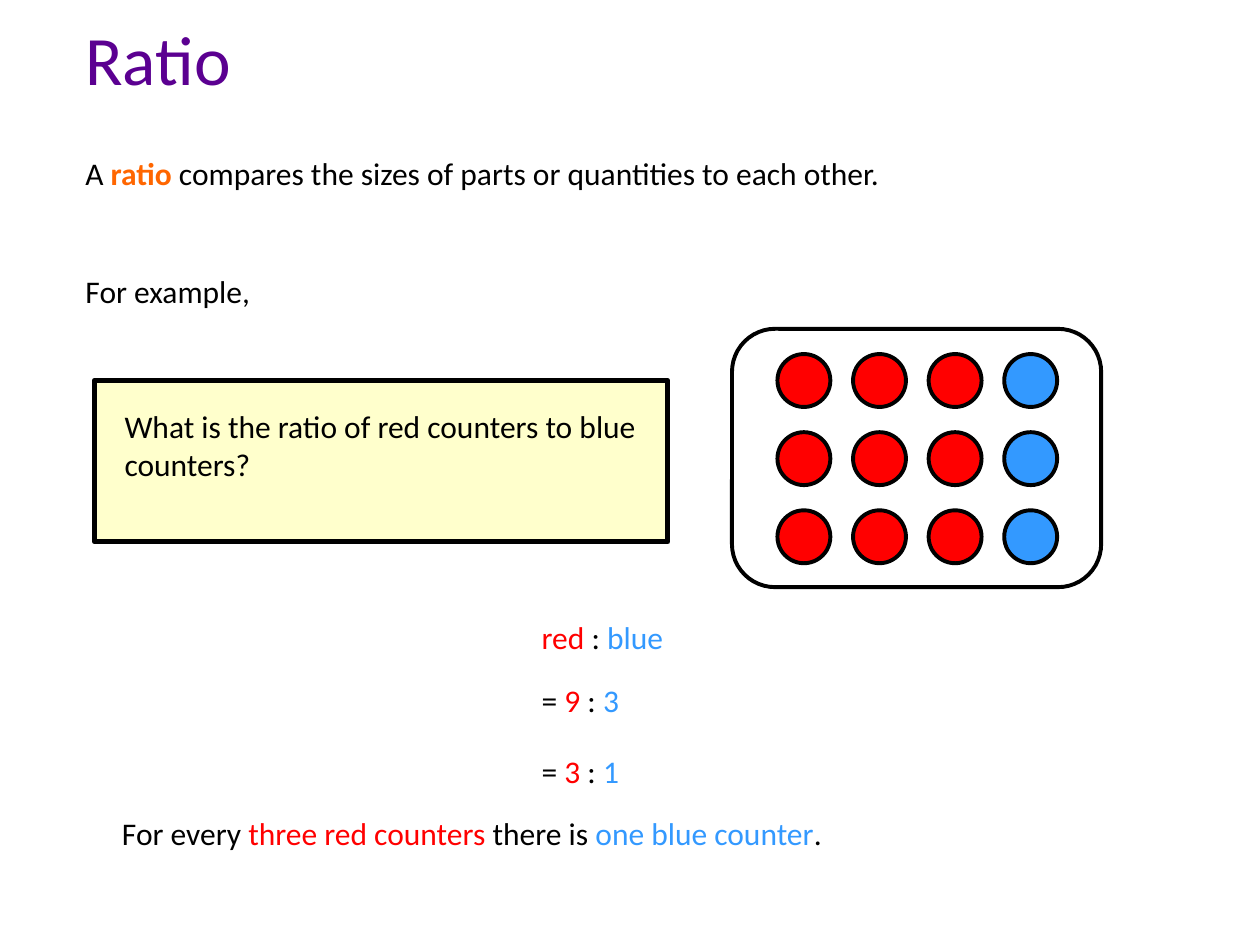
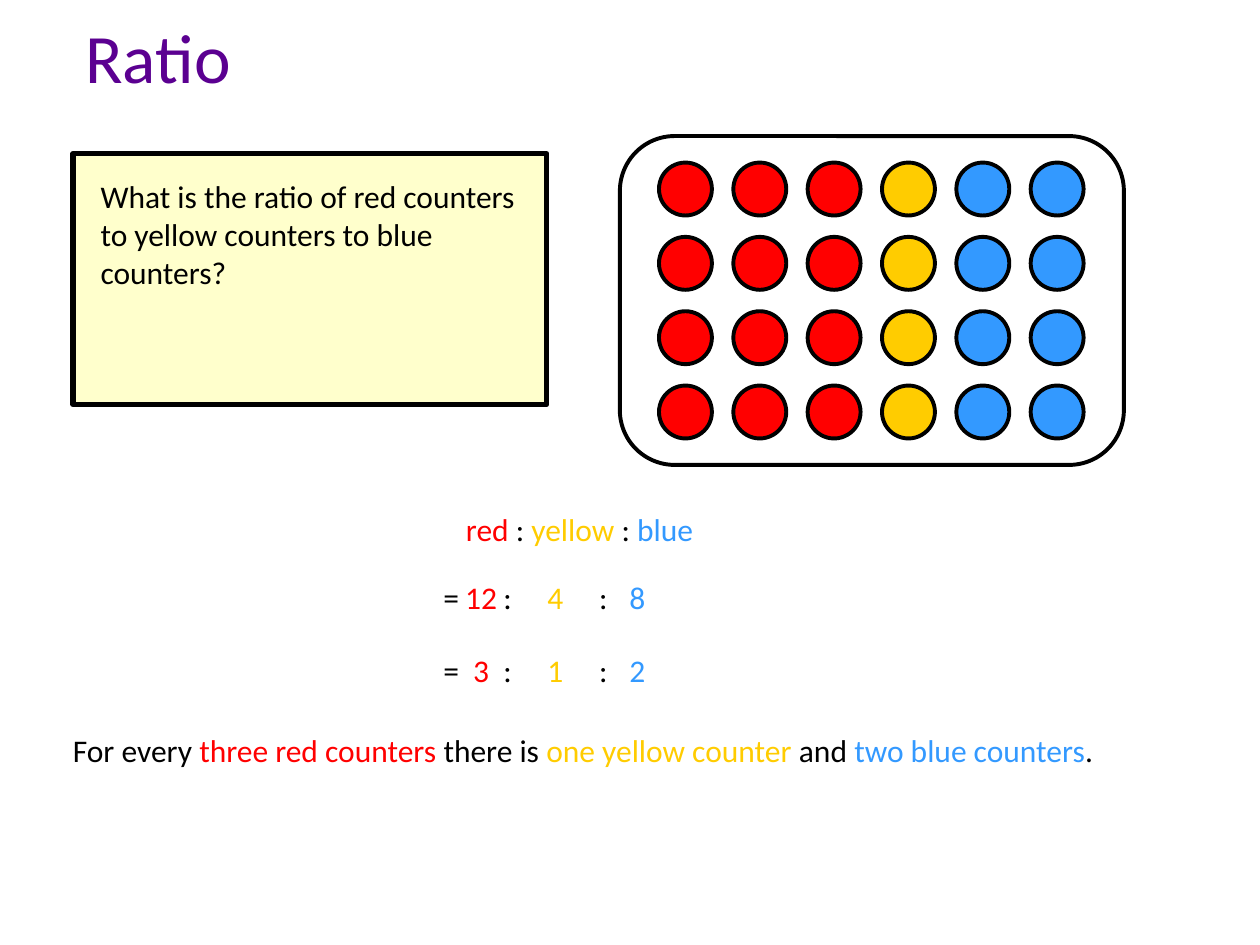
from lxml import etree
from pptx import Presentation
from pptx import util as u
from pptx.dml import color
from pptx.enum import shapes, text
from pptx.oxml import ns

COLOURS = {
    "title": "5B0091", "ink": "000000", "term": "FF6600",
    "red": "FF0000", "yellow": "FFCC00", "blue": "3399FF",
    "card": "FFFFCC", "panel": "FFFFFF",
}
KINDS = shapes.MSO_SHAPE
BODY = {"name": "Calibri", "size": u.Pt(18)}
TITLE = {"name": "Calibri", "size": u.Pt(39.6)}
COUNTER_SIZE = 0.42
# Centres of the columns in a three-part ratio, from the text edge
RATIO_TABS = [0.3, 0.51, 0.89, 1.27, 1.54]


def draw(parent, kind, place, fill, line_width=0):
    """Add a filled shape, outlined in ink when a line width is given."""
    shape = parent.shapes.add_shape(kind, *map(u.Inches, place))
    shape.shadow.inherit = False
    shape.fill.solid()
    shape.fill.fore_color.rgb = color.RGBColor.from_string(COLOURS[fill])
    if line_width:
        shape.line.color.rgb = color.RGBColor.from_string(COLOURS["ink"])
        shape.line.width = u.Pt(line_width)
    else:
        shape.line.fill.background()
    return shape


def write(box, spans, style=BODY, align=text.PP_ALIGN.LEFT,
          anchor=text.MSO_ANCHOR.TOP, tabs=()):
    """Fill a box with one paragraph of (words, colour) spans."""
    frame_format = {"word_wrap": True, "vertical_anchor": anchor}
    for name, value in frame_format.items():
        setattr(box.text_frame, name, value)
    para = box.text_frame.paragraphs[0]
    para.alignment = align
    if tabs:
        tab_list = etree.SubElement(para._p.get_or_add_pPr(), ns.qn("a:tabLst"))
        for stop in tabs:
            etree.SubElement(tab_list, ns.qn("a:tab"),
                             pos=str(u.Inches(stop)), algn="ctr")
    for words, colour in spans:
        span = para.add_run()
        span.text = words
        for name, value in {**style, "bold": colour == "term"}.items():
            setattr(span.font, name, value)
        span.font.color.rgb = color.RGBColor.from_string(COLOURS[colour])


# What differs between the two slides
pages = [
    {
        "title_at": (0.17, 0.17, 2.17, 0.58),
        "card_at": (0.75, 3.02, 4.55, 1.28),
        "question_at": (0.89, 3.18, 4.27, 0.9),
        "question": "What is the ratio of red counters to blue counters?",
        "panel_at": (5.81, 2.61, 2.93, 2.05),
        "first_counter": (6.17, 2.81),
        "pitch": (0.6, 0.62),
        "rows": 3,
        "columns": ["red"] * 3 + ["blue"],
        "lines": [
            ((0.58, 1.17, 9.13, 0.5), [
                ("A", "ink"), (" ratio", "term"),
                (" compares the sizes of parts or quantities to each other.", "ink")], ()),
            ((0.58, 2.11, 2.15, 0.5), [("For example,", "ink")], ()),
            ((4.2, 4.86, 1.59, 0.5), [
                ("red", "red"), (" : ", "ink"), ("blue", "blue")], ()),
            ((4.2, 5.36, 1.14, 0.5), [
                ("= ", "ink"), ("9", "red"), (" : ", "ink"), ("3", "blue")], ()),
            ((4.2, 5.92, 1.14, 0.5), [
                ("= ", "ink"), ("3", "red"), (" : ", "ink"), ("1", "blue")], ()),
            ((0.87, 6.41, 8.26, 0.5), [
                ("For every ", "ink"), ("three red counters", "red"),
                (" there is ", "ink"), ("one blue counter", "blue"), (".", "ink")], ()),
        ],
    },
    {
        "title_at": (0.17, 0.16, 2.17, 0.56),
        "card_at": (0.58, 1.22, 3.76, 1.99),
        "question_at": (0.7, 1.36, 3.53, 1.7),
        "question": "What is the ratio of red counters to yellow counters to blue counters?",
        "panel_at": (4.92, 1.08, 4, 2.61),
        "first_counter": (5.23, 1.29),
        "pitch": (0.59, 0.59),
        "rows": 4,
        "columns": ["red"] * 3 + ["yellow"] + ["blue"] * 2,
        "lines": [
            ((3.6, 4, 2.8, 0.5), [
                ("red", "red"), (" : ", "ink"), ("yellow", "yellow"),
                (" : ", "ink"), ("blue", "blue")], ()),
            ((3.42, 4.54, 2.7, 0.5), [
                ("=\t", "ink"), ("12", "red"), ("\t:\t", "ink"),
                ("4", "yellow"), ("\t:\t", "ink"), ("8", "blue")], RATIO_TABS),
            ((3.42, 5.12, 2.7, 0.5), [
                ("=\t", "ink"), ("3", "red"), ("\t:\t", "ink"),
                ("1", "yellow"), ("\t:\t", "ink"), ("2", "blue")], RATIO_TABS),
            ((0.48, 5.75, 9.32, 0.5), [
                ("For every ", "ink"), ("three red counters", "red"),
                (" there is ", "ink"), ("one yellow counter", "yellow"),
                (" and ", "ink"), ("two blue counters", "blue"), (".", "ink")], ()),
        ],
    },
]

deck = Presentation()
deck.slide_width, deck.slide_height = u.Inches(10), u.Inches(7.5)

for content in pages:
    page = deck.slides.add_slide(deck.slide_layouts[6])

    # Title
    title = page.shapes.add_textbox(*map(u.Inches, content["title_at"]))
    write(title, [("Ratio", "title")], TITLE,
          text.PP_ALIGN.CENTER, text.MSO_ANCHOR.MIDDLE)

    # Question card
    card = page.shapes.add_group_shape()
    draw(card, KINDS.RECTANGLE, content["card_at"], "card", 3)
    question = draw(card, KINDS.RECTANGLE, content["question_at"], "card")
    write(question, [(content["question"], "ink")])

    # Panel of counters
    tray = page.shapes.add_group_shape()
    draw(tray, KINDS.ROUNDED_RECTANGLE, content["panel_at"], "panel", 2.25)
    left, top = content["first_counter"]
    across, down = content["pitch"]
    for row in range(content["rows"]):
        for column, colour in enumerate(content["columns"]):
            place = (left + column * across, top + row * down,
                     COUNTER_SIZE, COUNTER_SIZE)
            draw(tray, KINDS.OVAL, place, colour, 2.25)

    # Explanation and working
    for place, spans, tabs in content["lines"]:
        box = page.shapes.add_textbox(*map(u.Inches, place))
        write(box, spans, tabs=tabs)

deck.save("out.pptx")
